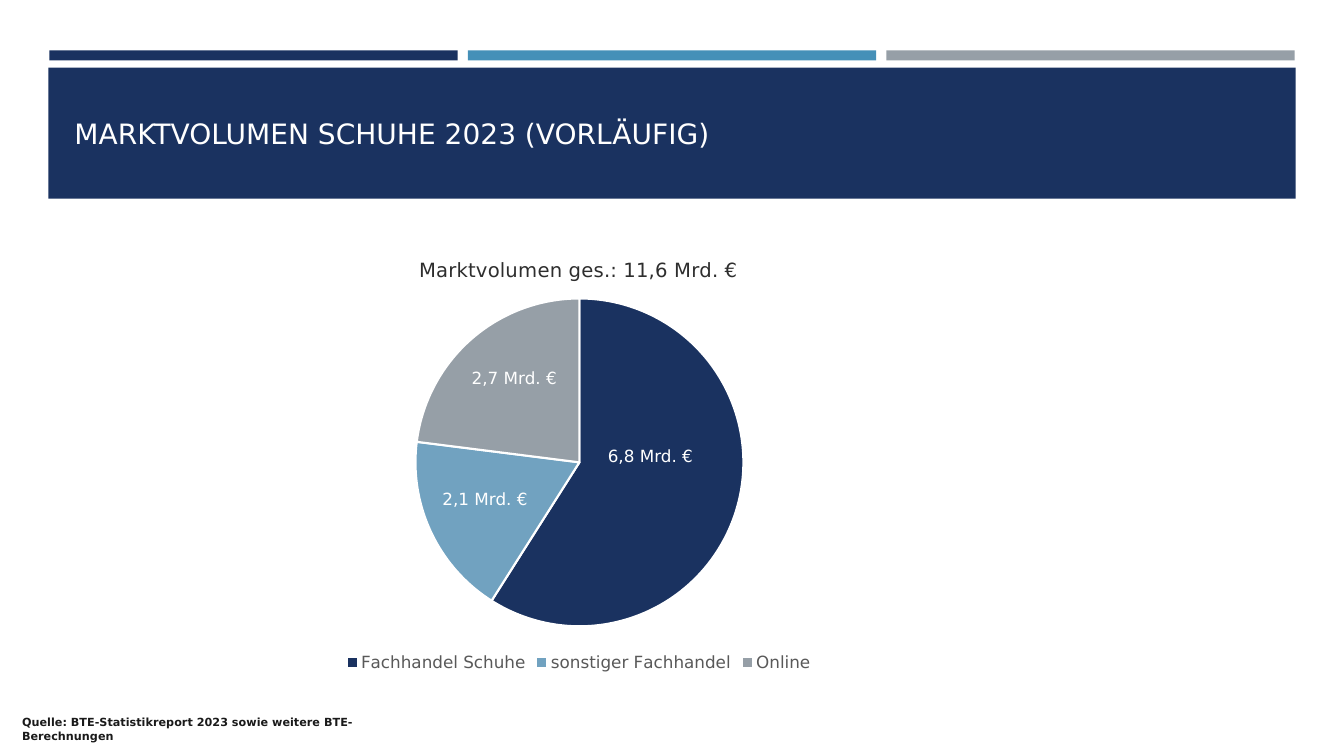
import pptx
import pptx.chart.data
import pptx.dml.color
import pptx.enum.chart
import pptx.enum.shapes
import pptx.enum.text
import pptx.util
from lxml import etree
from pptx.util import Inches

TITLE = "MARKTVOLUMEN SCHUHE 2023 (VORLÄUFIG)"
TOTAL = "Marktvolumen ges.: 11,6 Mrd. €"
SOURCE = "Quelle: BTE-Statistikreport 2023 sowie weitere BTE-Berechnungen"
SHARES = [("Fachhandel Schuhe", 59), ("sonstiger Fachhandel", 18), ("Online", 23)]
LABELS = [("6,8 Mrd. €", 5.93, 4.37), ("2,1 Mrd. €", 4.29, 4.8), ("2,7 Mrd. €", 4.58, 3.6)]

THEME = {
    "font": "DejaVu Sans",
    "navy": "1A3260", "white": "FFFFFF", "ink": "1A1A1A",
    "head": "2E2E2E", "gray": "595959",
    "bars": ["1A3260", "4590B8", "969FA7"],
    "pie": ["1A3260", "71A2C0", "969FA7"],
    "title": 20, "total": 14, "label": 12, "source": 8,
}

# Fractions of the chart frame
TITLE_POS = {"x": 0.27, "y": 0.04}
PLOT_POS = {"x": 0.27, "y": 0.143, "w": 0.462, "h": 0.745}


def rgb(code):
    return pptx.dml.color.RGBColor.from_string(code)


def style(font, size, color, bold=False):
    font.name = THEME["font"]
    font.size = pptx.util.Pt(size)
    font.color.rgb = rgb(color)
    font.bold = bold


def add_text(slide, text, box, size, color, bold=False, middle=False):
    frame = slide.shapes.add_textbox(*map(Inches, box)).text_frame
    frame.word_wrap = True
    anchor = pptx.enum.text.MSO_ANCHOR
    frame.vertical_anchor = anchor.MIDDLE if middle else anchor.TOP
    run = frame.paragraphs[0].add_run()
    run.text = text
    style(run.font, size, color, bold)


def add_rect(slide, box, color):
    rect = slide.shapes.add_shape(
        pptx.enum.shapes.MSO_SHAPE.RECTANGLE, *map(Inches, box))
    rect.shadow.inherit = False
    rect.fill.solid()
    rect.fill.fore_color.rgb = rgb(color)
    rect.line.fill.background()


def place(part, after, spots, inner=False):
    """Fix a chart part at fractions of the chart frame."""
    tag = "{" + part.nsmap["c"] + "}"
    for old in part.findall(tag + "layout"):
        part.remove(old)
    layout = etree.Element(tag + "layout")
    manual = etree.SubElement(layout, tag + "manualLayout")
    if inner:
        etree.SubElement(manual, tag + "layoutTarget", val="inner")
    for key in "xy":
        etree.SubElement(manual, f"{tag}{key}Mode", val="edge")
    for key, value in spots.items():
        etree.SubElement(manual, tag + key, val=str(value))
    if after is None:
        part.insert(0, layout)
    else:
        part.find(tag + after).addnext(layout)


def add_pie(slide, box):
    data = pptx.chart.data.CategoryChartData()
    data.categories = [name for name, _ in SHARES]
    data.add_series("Series 1", [share for _, share in SHARES])
    chart = slide.shapes.add_chart(
        pptx.enum.chart.XL_CHART_TYPE.PIE, *map(Inches, box), data).chart
    style(chart.font, THEME["label"], THEME["gray"])

    chart.has_title = True
    head = chart.chart_title.text_frame.paragraphs[0].add_run()
    head.text = TOTAL
    style(head.font, THEME["total"], THEME["head"])
    chart.chart_title.include_in_layout = False

    chart.has_legend = True
    chart.legend.position = pptx.enum.chart.XL_LEGEND_POSITION.BOTTOM
    chart.legend.include_in_layout = False
    style(chart.legend.font, THEME["label"], THEME["gray"])

    plot = chart.plots[0]
    plot.vary_by_categories = True
    for index, color in enumerate(THEME["pie"]):
        form = plot.series[0].points[index].format
        form.fill.solid()
        form.fill.fore_color.rgb = rgb(color)
        form.line.color.rgb = rgb(THEME["white"])
        form.line.width = pptx.util.Pt(1.5)

    root = chart.element.chart
    place(root.find("{*}title"), "tx", TITLE_POS)
    place(root.plotArea, None, PLOT_POS, inner=True)


def main():
    deck = pptx.Presentation()
    deck.slide_width, deck.slide_height = Inches(13.33), Inches(7.5)
    slide = deck.slides.add_slide(deck.slide_layouts[6])

    for index, color in enumerate(THEME["bars"]):
        add_rect(slide, (0.49 + 4.15 * index, 0.5, 4.05, 0.1), color)
    add_rect(slide, (0.48, 0.67, 12.37, 1.3), THEME["navy"])
    add_text(slide, TITLE, (0.64, 0.77, 12.06, 1.11),
             THEME["title"], THEME["white"], middle=True)

    add_pie(slide, (2.22, 2.33, 7.04, 4.38))
    for text, left, top in LABELS:
        add_text(slide, text, (left, top, 1.16, 0.3), THEME["label"], THEME["white"])
    add_text(slide, SOURCE, (0.12, 7.05, 3.49, 0.37),
             THEME["source"], THEME["ink"], bold=True)
    deck.save("out.pptx")


if __name__ == "__main__":
    main()
